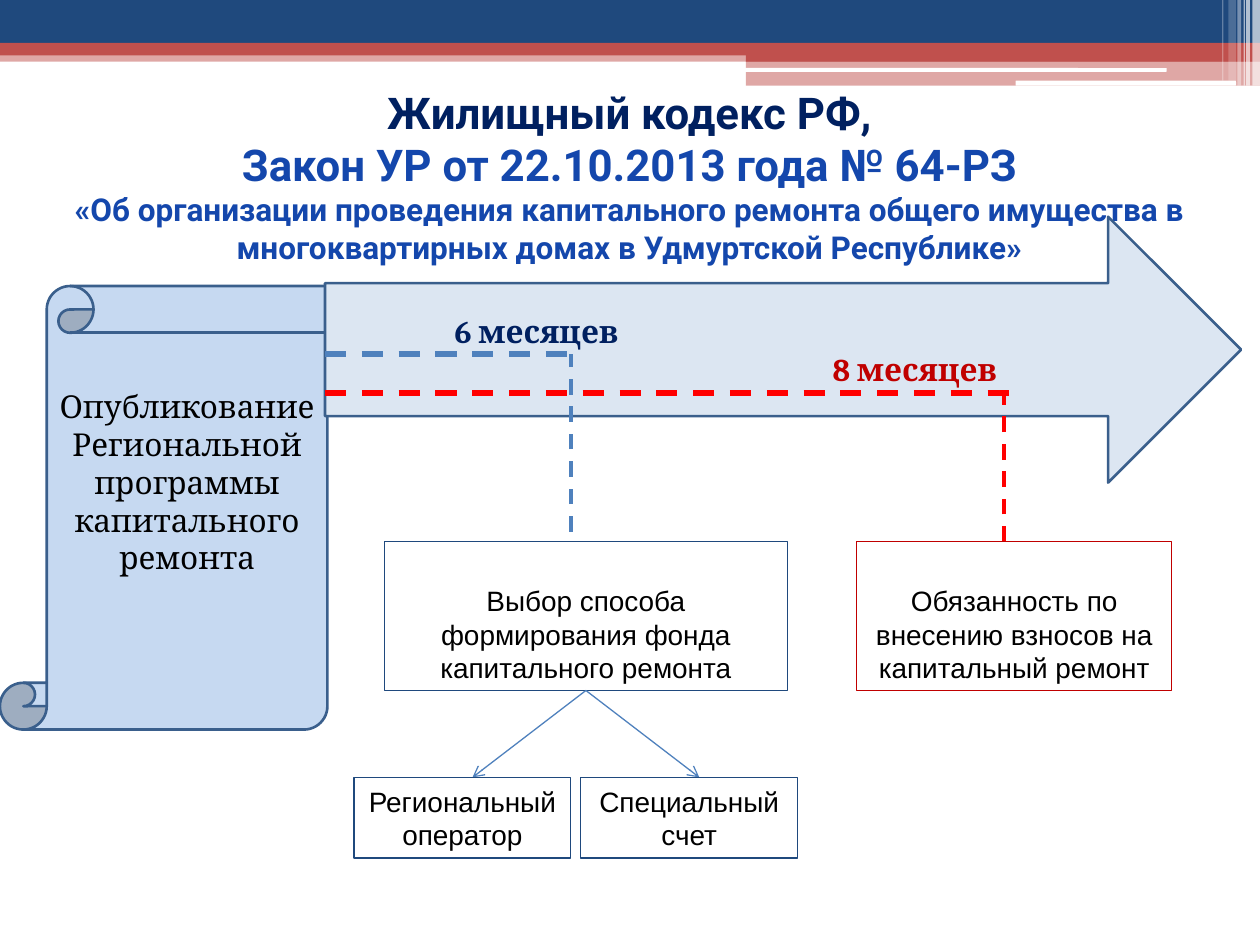
from lxml.etree import SubElement
from pptx import Presentation
from pptx.dml.color import RGBColor
from pptx.enum.dml import MSO_LINE
from pptx.enum.shapes import MSO_CONNECTOR, MSO_SHAPE
from pptx.enum.text import MSO_ANCHOR, MSO_AUTO_SIZE, PP_ALIGN
from pptx.oxml.ns import qn
from pptx.util import Inches, Pt

W, H = 10, 7.5
COLORS = {
    "navy": "1F497D", "brick": "C0504D", "white": "FFFFFF", "black": "000000",
    "ink": "002060", "royal": "1447AC", "edge": "3A5F8C", "scroll": "C6D9F1",
    "arrow": "DCE6F2", "blue": "4F81BD", "red": "FF0000", "crimson": "C00000",
}

# Header decoration: left, top, width, height, colour, opacity in percent
BANDS = [
    (0, 0.4, W, 0.09, "brick", 50),
    (0, 0, W, 0.34, "navy", 100),
    (0, 0.34, W, 0.1, "brick", 100),
    (5.92, 0.39, 4.08, 0.1, "brick", 100),
    (5.92, 0.48, 4.08, 0.2, "brick", 50),
]
PILLS = [(5.91, 0.54, 3.35, 0.03), (8.06, 0.64, 1.75, 0.04)]
# Vertical stripes: left, width, height, opacity
STRIPES = [
    (9.94, 0.06, 0.68, 65), (9.89, 0.03, 0.68, 65), (9.87, 0.01, 0.68, 60),
    (9.82, 0.03, 0.68, 40), (9.75, 0.06, 0.64, 20), (9.7, 0.01, 0.64, 30),
]

TITLE = [
    ("Жилищный кодекс РФ,", 25, "ink"),
    ("Закон УР от 22.10.2013 года № 64-РЗ", 25, "royal"),
    ("«Об организации проведения капитального ремонта общего имущества "
     "в многоквартирных домах в Удмуртской Республике»", 18, "royal"),
]
PUBLICATION = "Опубликование Региональной программы капитального ремонта"
# Terms on the arrow: text, colour, indent
TERMS = [("6 месяцев", "ink", 0.93), ("8 месяцев", "crimson", 3.93)]

START = 2.58                    # left end of the timeline
STEP_TOP, STEP_H = 4.3, 1.18    # row of duties
OPT_TOP, OPT_W, OPT_H, OPT_GAP = 6.17, 1.72, 0.64, 0.08
OPT_LEFT = 2.81
OPTIONS = ["Региональный оператор", "Специальный счет"]
# Duties: text, left, width, line colour
STEPS = [
    ("Выбор способа формирования фонда капитального ремонта", 3.05, 3.2, "navy"),
    ("Обязанность по внесению взносов на капитальный ремонт", 6.8, 2.5, "crimson"),
]
# Deadlines: level, drop position, line end, drop end, colour
DEADLINES = [
    (2.81, 4.53, 4.53, 4.22, "blue"),
    (3.12, 7.97, 8.05, STEP_TOP, "red"),
]

prs = Presentation()
prs.slide_width, prs.slide_height = Inches(W), Inches(H)
s = prs.slides.add_slide(prs.slide_layouts[5])


def rgb(name):
    return RGBColor.from_string(COLORS[name])


def add_shape(kind, box, fill=None, line=None, width=0.75, opacity=100):
    sp = s.shapes.add_shape(kind, *map(Inches, box))
    sp.shadow.inherit = False
    if fill:
        sp.fill.solid()
        sp.fill.fore_color.rgb = rgb(fill)
        if opacity < 100:
            clr = sp.fill._xPr.find(".//" + qn("a:srgbClr"))
            SubElement(clr, qn("a:alpha"), val=str(opacity * 1000))
    else:
        sp.fill.background()
    if line:
        sp.line.color.rgb = rgb(line)
        sp.line.width = Pt(width)
    else:
        sp.line.fill.background()
    return sp


def add_line(start, end, color, width, dashed=False):
    c = s.shapes.add_connector(MSO_CONNECTOR.STRAIGHT, *map(Inches, start + end))
    c.line.color.rgb = rgb(color)
    c.line.width = Pt(width)
    if dashed:
        c.line.dash_style = MSO_LINE.DASH
    else:
        SubElement(c.line._get_or_add_ln(), qn("a:tailEnd"), type="arrow")
    SubElement(c._element.spPr, qn("a:effectLst"))


def add_run(p, text, color, **fmt):
    r = p.add_run()
    r.text = text
    r.font.color.rgb = rgb(color)
    for key, value in fmt.items():
        setattr(r.font, key, value)


def set_frame(tf, **fmt):
    frame = {"word_wrap": True, "vertical_anchor": MSO_ANCHOR.MIDDLE, **fmt}
    for key, value in frame.items():
        setattr(tf, key, value)
    return tf.paragraphs[0]


def add_box(text, box, line, **frame):
    sp = add_shape(MSO_SHAPE.RECTANGLE, box, line=line)
    p = set_frame(sp.text_frame, **frame)
    p.alignment = PP_ALIGN.CENTER
    add_run(p, text, "black", name="Arial", size=Pt(16))


# Header decoration
for *box, color, opacity in BANDS:
    add_shape(MSO_SHAPE.RECTANGLE, box, color, opacity=opacity)
for box in PILLS:
    add_shape(MSO_SHAPE.ROUNDED_RECTANGLE, box, "white")
for left, width, height, opacity in STRIPES:
    add_shape(MSO_SHAPE.RECTANGLE, (left, 0, width, height), "white", opacity=opacity)

# Title
title = s.shapes.title
title.left, title.top, title.width, title.height = map(Inches, (0.39, 0.62, 9.21, 1.55))
p = set_frame(title.text_frame, auto_size=MSO_AUTO_SIZE.NONE)
p.alignment = PP_ALIGN.CENTER
for i, (text, size, color) in enumerate(TITLE):
    if i:
        p.add_line_break()
    add_run(p, text, color, name="Roboto", size=Pt(size), bold=True)

# Scroll with the starting event
scroll = add_shape(MSO_SHAPE.VERTICAL_SCROLL, (0, 2.27, 2.97, 3.52), "scroll", "edge", 1.5)
p = set_frame(scroll.text_frame, margin_bottom=Inches(0.65))
p.alignment = PP_ALIGN.CENTER
add_run(p, PUBLICATION, "black", name="Cambria", size=Pt(18))

# Timeline arrow with the terms
arrow = add_shape(MSO_SHAPE.RIGHT_ARROW, (START, 1.72, 7.27, 2.11), "arrow", "edge", 1.5)
p = set_frame(arrow.text_frame)
for i, (text, color, indent) in enumerate(TERMS):
    if i:
        p = arrow.text_frame.add_paragraph()
    p.alignment = PP_ALIGN.LEFT
    p._p.get_or_add_pPr().set("marL", str(Inches(indent)))
    add_run(p, text, color, name="Cambria", size=Pt(18), bold=True)

# Deadline lines
for level, drop, end, bottom, color in DEADLINES:
    add_line((START, level), (end, level), color, 3, dashed=True)
    add_line((drop, bottom), (drop, level), color, 2.25, dashed=True)

# Duties, then the options branching from the first one
for text, left, width, color in STEPS:
    add_box(text, (left, STEP_TOP, width, STEP_H), color,
            vertical_anchor=MSO_ANCHOR.BOTTOM)
fork = STEPS[0][1] + STEPS[0][2] / 2
for i, text in enumerate(OPTIONS):
    left = OPT_LEFT + i * (OPT_W + OPT_GAP)
    add_line((fork, STEP_TOP + STEP_H), (fork + (2 * i - 1) * 0.9, OPT_TOP), "blue", 0.75)
    add_box(text, (left, OPT_TOP, OPT_W, OPT_H), "navy")

prs.save("out.pptx")
